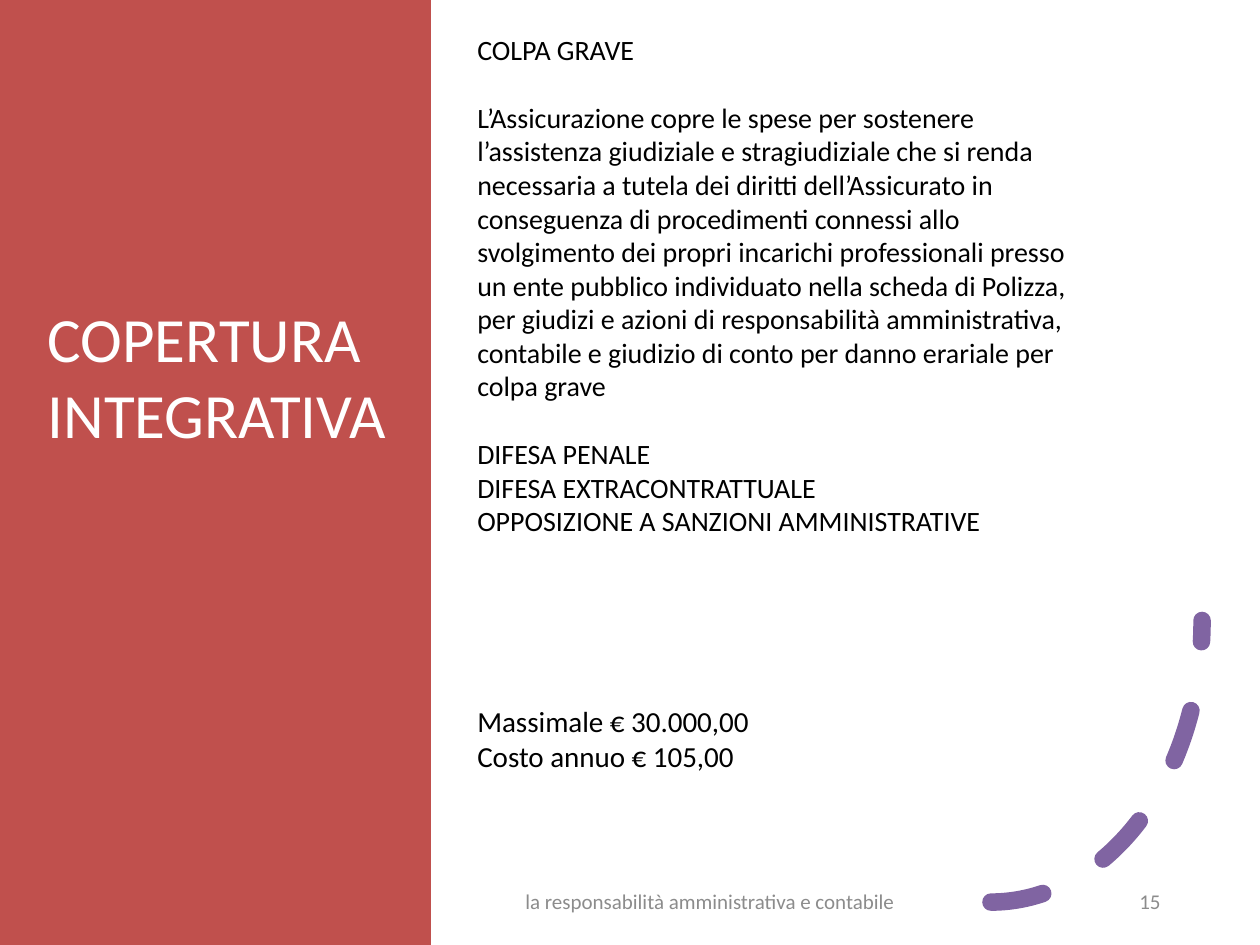
from pptx import Presentation
from pptx.dml.color import RGBColor
from pptx.enum.dml import MSO_LINE
from pptx.enum.shapes import MSO_SHAPE
from pptx.enum.text import MSO_ANCHOR, PP_ALIGN
from pptx.util import Inches, Pt

RECT, ARC = MSO_SHAPE.RECTANGLE, MSO_SHAPE.ARC
DASH = MSO_LINE.DASH
TOP, MID = MSO_ANCHOR.TOP, MSO_ANCHOR.MIDDLE
LEFT, MIDDLE, RIGHT = PP_ALIGN.LEFT, PP_ALIGN.CENTER, PP_ALIGN.RIGHT

THEME = {
    "font": "Calibri",
    "panel": "C0504D",
    "arc": "8064A2",
    "title": (36, "FFFFFF"),
    "body": (16, "000000"),
    "cost": (16.6, "000000"),
    "foot": (12, "8C8C8C"),
}
WIDE, HIGH = Inches(10), Inches(7.5)
GAP = 19.5

PANEL = (0, 0, 34.2, 100)
CURVE = (61.9, 35.87, 33.5, 59.6)

TEXTS = [
    {"role": "foot", "at": (36.5, 92.67, 39.7, 5.33), "align": MIDDLE, "anchor": MID,
     "lines": [("la responsabilità amministrativa e contabile", 6)]},
    {"role": "foot", "at": (80.5, 92.67, 12.6, 5.33), "align": RIGHT, "anchor": MID,
     "lines": [("15", 6)]},
    {"role": "cost", "at": (36.9, 74.8, 56.6, 8.4), "pitch": 0.7,
     "lines": [("Massimale € 30.000,00", 6), ("Costo annuo € 105,00", 6)]},
    {"role": "title", "at": (2.8, 31.07, 29.1, 17.47),
     "lines": [("COPERTURA INTEGRATIVA", 0)]},
    {"role": "body", "at": (36.9, 2.8, 50, 66),
     "lines": [
         ("COLPA GRAVE", GAP),
         ("L’Assicurazione copre le spese per sostenere l’assistenza giudiziale e "
          "stragiudiziale che si renda necessaria a tutela dei diritti dell’Assicurato "
          "in conseguenza di procedimenti connessi allo svolgimento dei propri incarichi "
          "professionali presso un ente pubblico individuato nella scheda di Polizza, per "
          "giudizi e azioni di responsabilità amministrativa, contabile e giudizio di "
          "conto per danno erariale per colpa grave", GAP),
         ("DIFESA PENALE", 0),
         ("DIFESA EXTRACONTRATTUALE\nOPPOSIZIONE A SANZIONI AMMINISTRATIVE", 0),
     ]},
]


def place(at):
    return [round(part * side / 100) for part, side in zip(at, (WIDE, HIGH) * 2)]


def tint(code):
    return RGBColor.from_string(code)


def add_panel(slide):
    panel = slide.shapes.add_shape(RECT, *place(PANEL))
    panel.shadow.inherit = False
    panel.fill.solid()
    panel.fill.fore_color.rgb = tint(THEME["panel"])
    panel.line.fill.background()


def add_curve(slide):
    curve = slide.shapes.add_shape(ARC, *place(CURVE))
    curve.shadow.inherit = False
    curve.fill.background()
    curve.line.color.rgb = tint(THEME["arc"])
    curve.line.width = Pt(10)
    curve.line.dash_style = DASH
    curve.line._get_or_add_ln().set("cap", "rnd")
    curve._element.spPr.xfrm.set("flipV", "1")


def add_text(slide, item):
    frame = slide.shapes.add_textbox(*place(item["at"])).text_frame
    frame.word_wrap = True
    frame.vertical_anchor = item.get("anchor", TOP)
    size, color = THEME[item["role"]]
    for index, (words, after) in enumerate(item["lines"]):
        para = frame.add_paragraph() if index else frame.paragraphs[0]
        para.text = words
        para.alignment = item.get("align", LEFT)
        para.line_spacing = item.get("pitch", 1.0)
        para.space_after = Pt(after)
        para.font.name = THEME["font"]
        para.font.size = Pt(size)
        para.font.color.rgb = tint(color)


def main():
    deck = Presentation()
    deck.slide_width, deck.slide_height = WIDE, HIGH
    slide = deck.slides.add_slide(deck.slide_layouts[6])
    add_panel(slide)
    add_curve(slide)
    for item in TEXTS:
        add_text(slide, item)
    deck.save("out.pptx")


if __name__ == "__main__":
    main()
